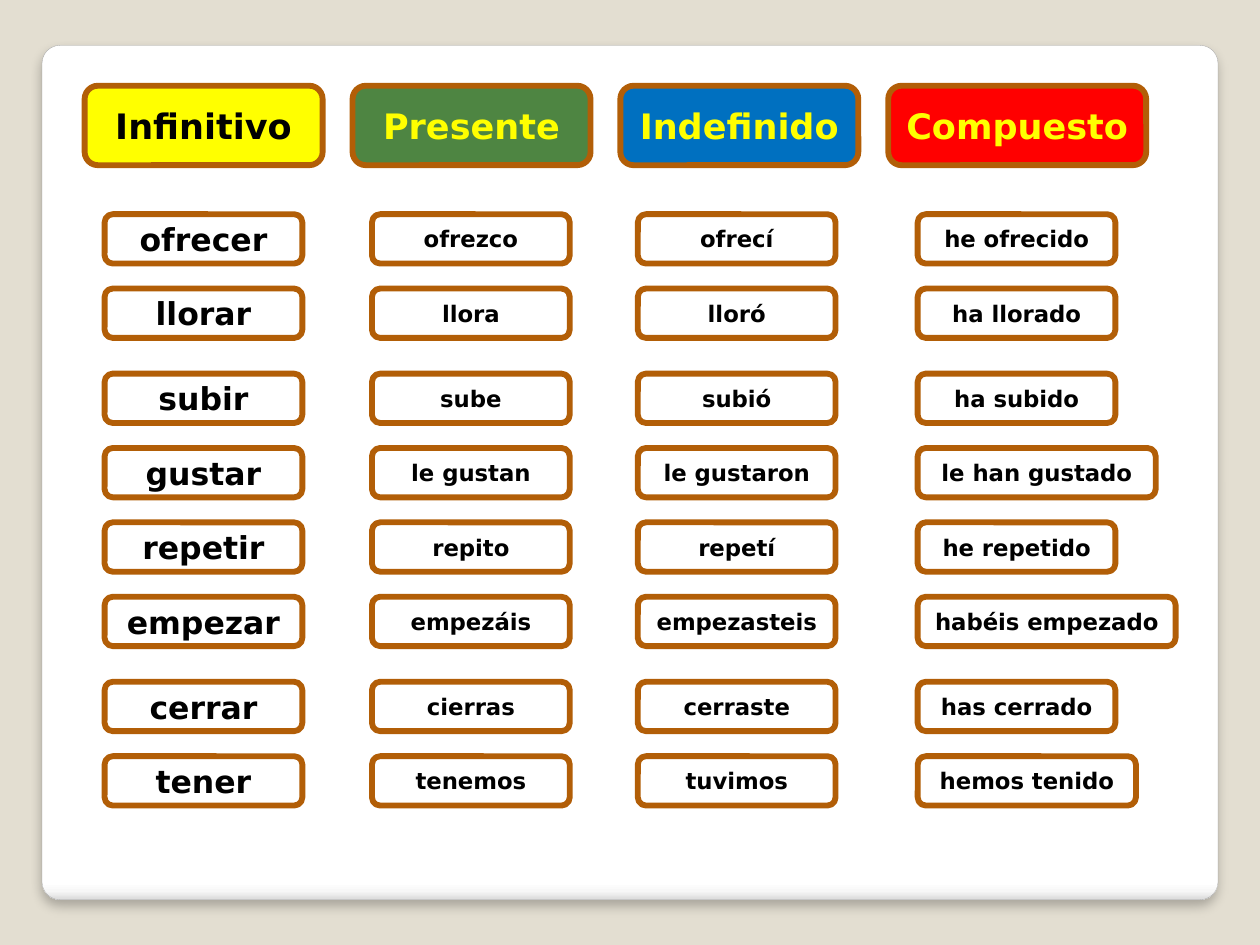
from dataclasses import dataclass

import lxml.etree
import pptx
import pptx.dml.color
import pptx.enum.shapes
import pptx.enum.text
import pptx.oxml
import pptx.util

Pt = pptx.util.Pt
FONT = "DejaVu Sans"
BORDER = "B25E07"
DRAWING_NS = "http://schemas.openxmlformats.org/drawingml/2006/main"

HEADER_TOP, HEADER_HEIGHT = 49, 45.4
FIRST_ROW_TOP, ROW_PITCH, GROUP_GAP = 122.4, 42.5, 6.1
VERB_WIDTH, VERB_HEIGHT = 113, 28.2


@dataclass(frozen=True)
class Tense:
    title: str
    header_left: float
    header_width: float
    fill: str
    title_color: str
    verb_left: float
    verb_size: float


@dataclass(frozen=True)
class Label:
    text: str
    left: float
    top: float
    width: float
    height: float
    size: float
    fill: str = "FFFFFF"
    color: str = "000000"


TENSES = [
    Tense("Infinitivo", 48.4, 136, "FFFF00", "000000", 59.8, 18),
    Tense("Presente", 201.5, 136, "4E8542", "FFFF00", 212.6, 13),
    Tense("Indefinido", 354.5, 136, "0070C0", "FFFF00", 364.5, 13),
    Tense("Compuesto", 507.6, 147.4, "FF0000", "FFFF00", 524.4, 13),
]

VERB_GROUPS = [
    [
        ("ofrecer", "ofrezco", "ofrecí", "he ofrecido"),
        ("llorar", "llora", "lloró", "ha llorado"),
    ],
    [
        ("subir", "sube", "subió", "ha subido"),
        ("gustar", "le gustan", "le gustaron", "le han gustado"),
        ("repetir", "repito", "repetí", "he repetido"),
        ("empezar", "empezáis", "empezasteis", "habéis empezado"),
    ],
    [
        ("cerrar", "cierras", "cerraste", "has cerrado"),
        ("tener", "tenemos", "tuvimos", "hemos tenido"),
    ],
]

WIDE_VERBS = {"le han gustado": 136, "habéis empezado": 147.4, "hemos tenido": 124.7}

PANEL_GRADIENT = [(0, "FFFFFF"), (98, "FFFFFF"), (99, "F7F7F7"), (100, "DADADA")]


def rgb(value: str) -> pptx.dml.color.RGBColor:
    return pptx.dml.color.RGBColor.from_string(value)


def add_rounded(slide, left: float, top: float, width: float, height: float,
                border: str, border_width: float):
    box = slide.shapes.add_shape(
        pptx.enum.shapes.MSO_SHAPE.ROUNDED_RECTANGLE,
        Pt(left), Pt(top), Pt(width), Pt(height))
    box.shadow.inherit = False
    box.line.color.rgb = rgb(border)
    box.line.width = Pt(border_width)
    return box


def add_panel(slide) -> None:
    panel = add_rounded(slide, 24, 25.9, 672, 488.2, "A4A4A4", 0.16)
    panel.adjustments[0] = 0.021
    panel.fill.gradient()
    stops = "".join(
        f'<a:gs pos="{position * 1000}"><a:srgbClr val="{color}"/></a:gs>'
        for position, color in PANEL_GRADIENT)
    properties = panel.element.spPr
    gradient = properties.find(f"{{{DRAWING_NS}}}gradFill")
    properties.replace(gradient, pptx.oxml.parse_xml(
        f'<a:gradFill xmlns:a="{DRAWING_NS}" rotWithShape="1">'
        f'<a:gsLst>{stops}</a:gsLst><a:lin ang="5400000" scaled="0"/></a:gradFill>'))
    effects = properties.find(f"{{{DRAWING_NS}}}effectLst")
    shadow = lxml.etree.SubElement(
        effects, f"{{{DRAWING_NS}}}outerShdw", blurRad=str(int(Pt(6))),
        dist=str(int(Pt(4))), dir="5400000", algn="ctr", rotWithShape="0")
    shade = lxml.etree.SubElement(shadow, f"{{{DRAWING_NS}}}srgbClr", val="000000")
    lxml.etree.SubElement(shade, f"{{{DRAWING_NS}}}alpha", val="25000")


def add_label(slide, label: Label) -> None:
    box = add_rounded(slide, label.left, label.top, label.width, label.height,
                      BORDER, 3.35)
    box.fill.solid()
    box.fill.fore_color.rgb = rgb(label.fill)
    frame = box.text_frame
    frame.word_wrap = True
    frame.vertical_anchor = pptx.enum.text.MSO_ANCHOR.MIDDLE
    frame.margin_left = frame.margin_right = Pt(0)
    frame.margin_top = frame.margin_bottom = Pt(0)
    wording = frame.paragraphs[0]
    wording.text = label.text
    wording.alignment = pptx.enum.text.PP_ALIGN.CENTER
    wording.font.name = FONT
    wording.font.size = Pt(label.size)
    wording.font.bold = True
    wording.font.color.rgb = rgb(label.color)


def add_headers(slide) -> None:
    for tense in TENSES:
        add_label(slide, Label(tense.title, tense.header_left, HEADER_TOP,
                               tense.header_width, HEADER_HEIGHT, 20,
                               tense.fill, tense.title_color))


def add_verbs(slide) -> None:
    top = FIRST_ROW_TOP
    for group in VERB_GROUPS:
        for forms in group:
            for tense, form in zip(TENSES, forms):
                width = WIDE_VERBS.get(form, VERB_WIDTH)
                add_label(slide, Label(form, tense.verb_left, top, width,
                                       VERB_HEIGHT, tense.verb_size))
            top += ROW_PITCH
        top += GROUP_GAP


def main() -> None:
    deck = pptx.Presentation()
    deck.slide_width, deck.slide_height = Pt(720), Pt(540)
    slide = deck.slides.add_slide(deck.slide_layouts[6])
    slide.background.fill.solid()
    slide.background.fill.fore_color.rgb = rgb("E3DED1")
    add_panel(slide)
    add_headers(slide)
    add_verbs(slide)
    deck.save("out.pptx")


if __name__ == "__main__":
    main()
